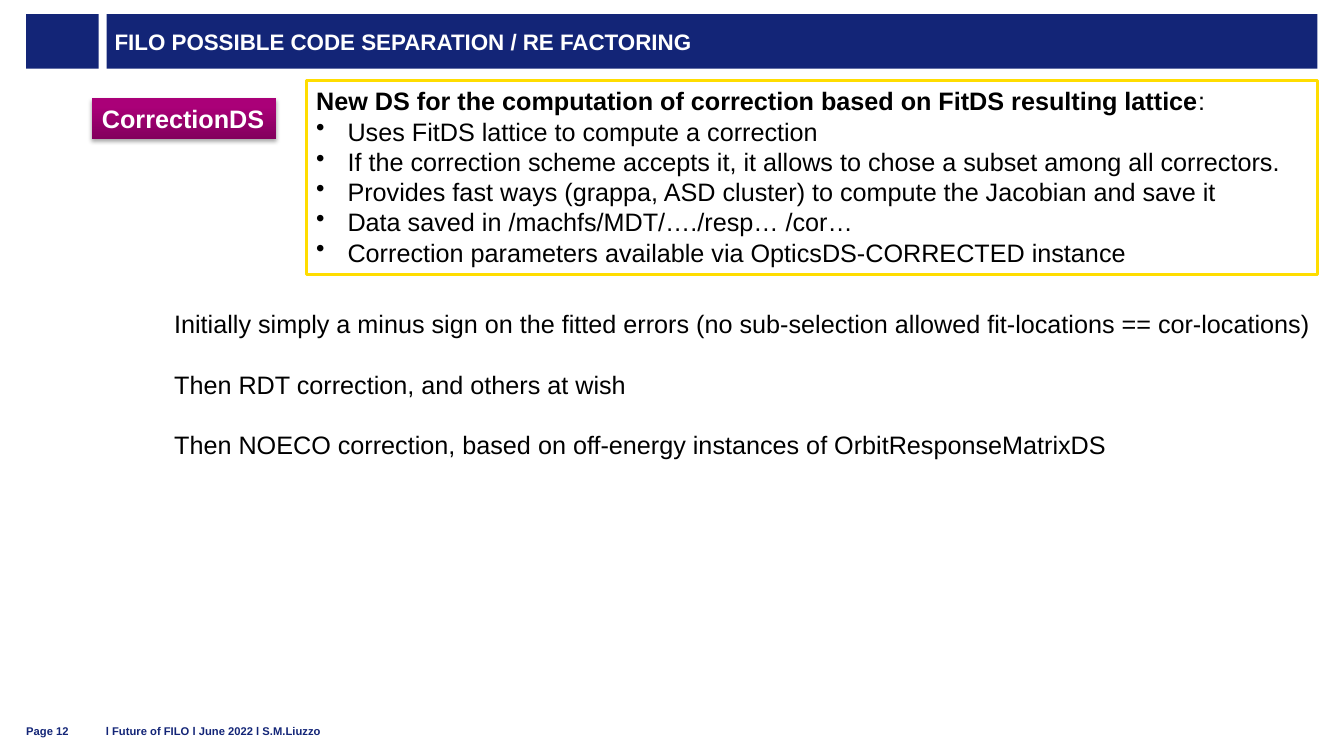
from lxml.etree import SubElement
from pptx import Presentation
from pptx.dml.color import RGBColor
from pptx.enum.shapes import MSO_SHAPE
from pptx.enum.text import MSO_ANCHOR, MSO_AUTO_SIZE, PP_ALIGN
from pptx.oxml import parse_xml
from pptx.oxml.ns import nsdecls, qn
from pptx.util import Cm, Pt

NAVY, WHITE, BLACK, YELLOW = "132577", "FFFFFF", "000000", "FFDD00"


def color(value):
    return RGBColor.from_string(value)


def add_box(left, top, width, height, lines, size, ink, bold=False, fill=None,
            anchor=MSO_ANCHOR.TOP, margins=(0.25, 0.13), wrap=True, gap=0):
    box = page.shapes.add_shape(MSO_SHAPE.RECTANGLE, Cm(left), Cm(top), Cm(width), Cm(height))
    box.shadow.inherit = False
    box.line.fill.background()
    if fill:
        box.fill.solid()
        box.fill.fore_color.rgb = color(fill)
    else:
        box.fill.background()
    frame = box.text_frame
    frame.word_wrap = wrap
    frame.vertical_anchor = anchor
    frame.margin_left = frame.margin_right = Cm(margins[0])
    frame.margin_top = frame.margin_bottom = Cm(margins[1])
    for index, line in enumerate(lines):
        para = frame.paragraphs[0] if index == 0 else frame.add_paragraph()
        para.text = line
        para.alignment = PP_ALIGN.LEFT
        if index:
            para.space_before = Pt(gap)
        para.font.name = "Arial"
        para.font.size = Pt(size)
        para.font.bold = bold
        para.font.color.rgb = color(ink)
    return box


deck = Presentation()
deck.slide_width, deck.slide_height = Cm(33.87), Cm(19.05)
page = deck.slides.add_slide(deck.slide_layouts[6])

# Header band
add_box(0.66, 0.36, 1.83, 1.37, [], 16, WHITE, fill=NAVY)
add_box(2.69, 0.36, 30.51, 1.37, ["FILO POSSIBLE CODE SEPARATION / RE FACTORING"], 16, WHITE,
        bold=True, fill=NAVY, anchor=MSO_ANCHOR.MIDDLE, margins=(0.2, 0))

# Footer
for left, width, words in [(0.66, 1.52, "Page 12"),
                           (2.67, 22.66, "l Future of FILO l June 2022 l S.M.Liuzzo")]:
    add_box(left, 18.01, width, 0.58, [words], 8, NAVY, bold=True,
            anchor=MSO_ANCHOR.BOTTOM, margins=(0, 0))

# Server label with gradient and soft shadow
label = add_box(2.32, 2.47, 4.65, 1.03, ["CorrectionDS"], 18, WHITE, bold=True, wrap=False)
label.text_frame.auto_size = MSO_AUTO_SIZE.SHAPE_TO_FIT_TEXT
label.fill.gradient()
label.fill.gradient_angle = 90
stops = label._element.spPr.find(qn("a:gradFill")).find(qn("a:gsLst"))
for stop in list(stops):
    stops.remove(stop)
for percent, shade in [(0, "83005D"), (80, "AA0078"), (100, "AA0079")]:
    stop = SubElement(stops, qn("a:gs"), pos=str(percent * 1000))
    SubElement(stop, qn("a:srgbClr"), val=shade)
label._element.spPr.find(qn("a:effectLst")).append(parse_xml(
    f'<a:outerShdw {nsdecls("a")} blurRad="{Pt(3.1)}" dist="{Pt(1.8)}" dir="5400000" rotWithShape="0">'
    '<a:srgbClr val="000000"><a:alpha val="35000"/></a:srgbClr></a:outerShdw>'))

# Description of the new server
description = add_box(7.72, 2.03, 25.48, 4.88, [
    "",
    "Uses FitDS lattice to compute a correction",
    "If the correction scheme accepts it, it allows to chose a subset among all correctors.",
    "Provides fast ways (grappa, ASD cluster) to compute the Jacobian and save it",
    "Data saved in /machfs/MDT/…./resp… /cor…",
    "Correction parameters available via OpticsDS-CORRECTED instance",
], 18, BLACK, fill=WHITE)
description.line.color.rgb = color(YELLOW)
description.line.width = Pt(2)
description.text_frame.auto_size = MSO_AUTO_SIZE.SHAPE_TO_FIT_TEXT
heading, *bullets = description.text_frame.paragraphs
for words, bold in [("New DS for the computation of correction based on FitDS resulting lattice", True),
                    (":", False)]:
    span = heading.add_run()
    span.text = words
    span.font.bold = bold
for para in bullets:
    props = para._p.get_or_add_pPr()
    props.set("marL", str(Cm(0.79)))
    props.set("indent", str(-Cm(0.79)))
    bullet = parse_xml(f'<a:buChar {nsdecls("a")} char="•"/>')
    props.find(qn("a:defRPr")).addprevious(bullet)

# Planned steps
steps = add_box(4.14, 7.65, 29.41, 4.11, [
    "Initially simply a minus sign on the fitted errors (no sub-selection allowed fit-locations == cor-locations)",
    "Then RDT correction, and others at wish",
    "Then NOECO correction, based on off-energy instances of OrbitResponseMatrixDS",
], 18, BLACK, wrap=False, gap=21.6)
deck.save("out.pptx")
